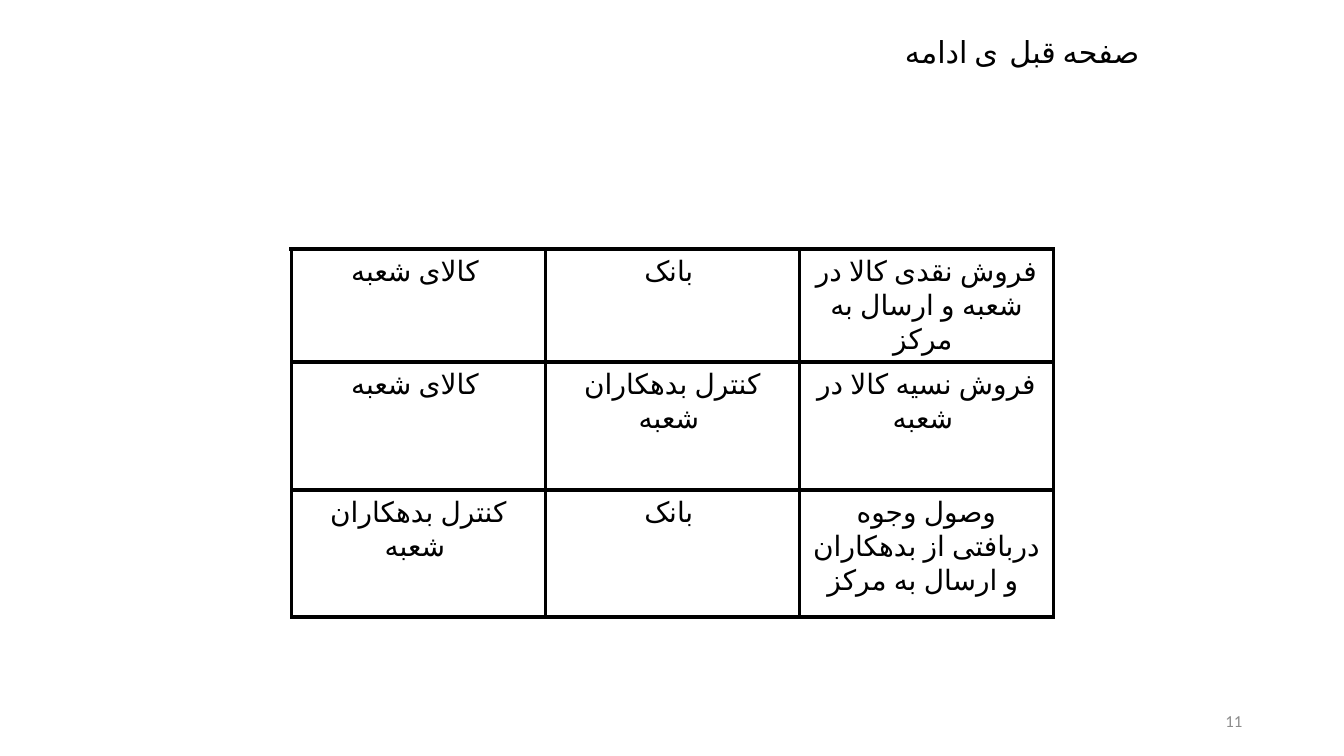
"""Build a slide with a three-by-three table of branch journal entries."""
import dataclasses
import typing

import lxml.etree
import pptx
import pptx.dml.color
import pptx.enum.text
import pptx.oxml.ns
import pptx.util

ALIGN = pptx.enum.text.PP_ALIGN
ANCHOR = pptx.enum.text.MSO_ANCHOR


@dataclasses.dataclass(frozen=True)
class Theme:
    ink: str = "000000"
    muted: str = "8C8C8C"
    title_font: str = "Calibri"
    table_font: str = "Lato"
    title_size: float = 21.6
    gap_size: float = 36
    table_size: float = 20
    number_size: float = 12
    border: float = 3
    thin_border: float = 2.25


class Span(typing.NamedTuple):
    text: str
    size: float
    font: str
    color: str
    language: str = "fa-IR"


class Area(typing.NamedTuple):
    """Percentages of the slide's width and height."""

    left: float
    top: float
    width: float
    height: float


class Label(typing.NamedTuple):
    area: Area
    spans: list[Span]
    line_spacing: float


THEME = Theme()
SLIDE_WIDTH = pptx.util.Inches(13.33)
SLIDE_HEIGHT = pptx.util.Inches(7.5)
COLUMN_SHARE = 18.9
ROW_SHARES = [14.93, 16.93, 16.8]
TABLE_AREA = Area(21.68, 32.93, 3 * COLUMN_SHARE, sum(ROW_SHARES))
ENTRIES = [
    ["کالای شعبه ", "بانک ", "فروش نقدی کالا در شعبه و ارسال به مرکز "],
    ["کالای شعبه ", "کنترل بدهکاران شعبه ", "فروش نسيه کالا در شعبه "],
    ["کنترل بدهکاران شعبه ", "بانک ", "وصول وجوه دربافتی از بدهکاران و ارسال به مرکز "],
]
LABELS = [
    Label(Area(70.67, 92.67, 22.5, 5.33),
          [Span("11", THEME.number_size, THEME.title_font, THEME.muted, "en-US")], 1.0),
    Label(Area(34.66, 3.73, 50.86, 5.07),
          [Span(text, size, THEME.title_font, THEME.ink, language)
           for text, size, language in (
               ("صفحه قبل", THEME.title_size, "fa-IR"),
               (" ", THEME.gap_size, "fa-IR"),
               ("ی", THEME.title_size, "en-US"),
               (" ادامه", THEME.title_size, "fa-IR"))], 0.9),
]


def across(share: float) -> int:
    return round(SLIDE_WIDTH * share / 100)


def down(share: float) -> int:
    return round(SLIDE_HEIGHT * share / 100)


def place(area: Area) -> tuple[int, int, int, int]:
    return across(area.left), down(area.top), across(area.width), down(area.height)


def apply(target: typing.Any, formats: dict[str, typing.Any]) -> None:
    for name, value in formats.items():
        setattr(target, name, value)


def write(para: typing.Any, spans: list[Span], formats: dict[str, typing.Any]) -> None:
    apply(para, formats)
    for span in spans:
        run = para.add_run()
        run.text = span.text
        apply(run.font, {"size": pptx.util.Pt(span.size), "name": span.font})
        run.font.color.rgb = pptx.dml.color.RGBColor.from_string(span.color)
        properties = run._r.get_or_add_rPr()
        properties.set("lang", span.language)
        lxml.etree.SubElement(properties, pptx.oxml.ns.qn("a:cs"), typeface=span.font)


def draw_label(page: typing.Any, label: Label) -> None:
    box = page.shapes.add_textbox(*place(label.area))
    apply(box.text_frame, {"word_wrap": True, "vertical_anchor": ANCHOR.MIDDLE})
    write(box.text_frame.paragraphs[0], label.spans,
          {"alignment": ALIGN.RIGHT, "line_spacing": label.line_spacing})


def draw_borders(cell: typing.Any, widths: dict[str, float]) -> None:
    qualify = pptx.oxml.ns.qn
    properties = cell._tc.get_or_add_tcPr()
    for index, (side, width) in enumerate(widths.items()):
        line = lxml.etree.Element(qualify(f"a:ln{side}"), w=str(pptx.util.Pt(width)))
        fill = lxml.etree.SubElement(line, qualify("a:solidFill"))
        lxml.etree.SubElement(fill, qualify("a:srgbClr"), val=THEME.ink)
        properties.insert(index, line)


def draw_table(page: typing.Any) -> None:
    table = page.shapes.add_table(len(ENTRIES), len(ENTRIES[0]), *place(TABLE_AREA)).table
    apply(table, {"first_row": False, "horz_banding": False})
    for column in table.columns:
        column.width = across(COLUMN_SHARE)
    for row_index, (share, entries) in enumerate(zip(ROW_SHARES, ENTRIES)):
        table.rows[row_index].height = down(share)
        for column_index, text in enumerate(entries):
            cell = table.cell(row_index, column_index)
            cell.fill.background()
            write(cell.text_frame.paragraphs[0],
                  [Span(text, THEME.table_size, THEME.table_font, THEME.ink)],
                  {"alignment": ALIGN.CENTER,
                   "space_before": pptx.util.Pt(THEME.table_size * 0.2)})
            widths = dict.fromkeys("LRTB", THEME.border)
            if row_index > 0 and column_index == 0:
                widths["L"] = THEME.thin_border
            draw_borders(cell, widths)


def main() -> None:
    deck = pptx.Presentation()
    apply(deck, {"slide_width": SLIDE_WIDTH, "slide_height": SLIDE_HEIGHT})
    page = deck.slides.add_slide(deck.slide_layouts[6])
    for label in LABELS:
        draw_label(page, label)
    draw_table(page)
    deck.save("out.pptx")


if __name__ == "__main__":
    main()
